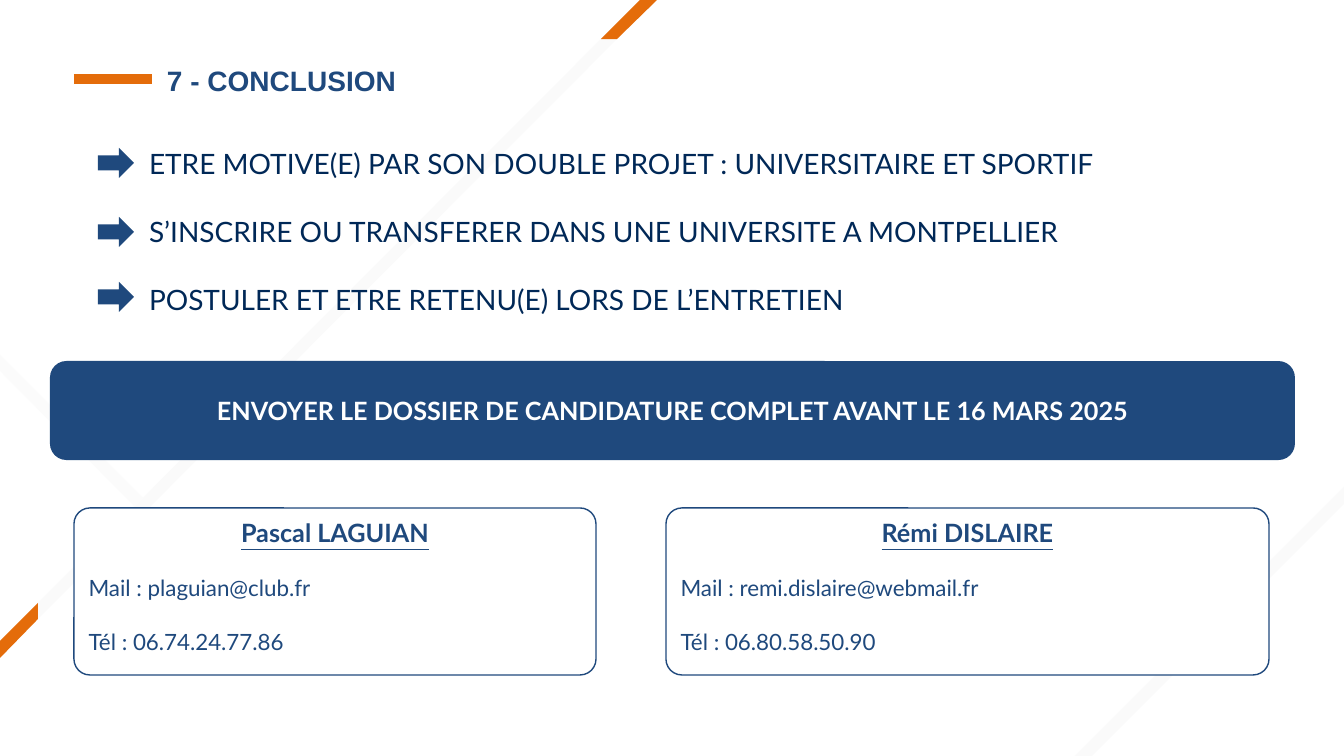
from lxml.etree import SubElement
from pptx import Presentation
from pptx.dml.color import RGBColor
from pptx.enum.shapes import MSO_CONNECTOR as CONN, MSO_SHAPE as SHAPE
from pptx.enum.text import MSO_ANCHOR as ANCHOR, PP_ALIGN as ALIGN
from pptx.oxml.ns import qn
from pptx.util import Pt

PX = 914400 / 100.8
NAVY, INK, ORANGE, PALE, WHITE = "1F497D", "002857", "E46C0A", "F2F2F2", "FFFFFF"


def px(*lengths):
    return [round(n * PX) for n in lengths]


def color(value):
    return RGBColor.from_string(value)


def paint(shape, fill, line=None):
    shape.shadow.inherit = False
    shape.fill.solid()
    shape.fill.fore_color.rgb = color(fill)
    if line:
        shape.line.color.rgb = color(line)
        shape.line.width = Pt(1)
    else:
        shape.line.fill.background()


def style(p, size, ink, font="Lato", bold=False, underline=False, align=ALIGN.LEFT):
    p.alignment = align
    f = p.font
    f.name, f.size, f.bold, f.underline = font, Pt(size), bold, underline
    f.color.rgb = color(ink)


def add_box(s, kind, box, fill, line=None):
    sp = s.shapes.add_shape(kind, *px(*box))
    paint(sp, fill, line)
    return sp


def add_label(s, box, text, anchor=ANCHOR.TOP):
    tf = s.shapes.add_textbox(*px(*box)).text_frame
    tf.word_wrap = True
    tf.vertical_anchor = anchor
    tf.margin_left = tf.margin_right = tf.margin_top = tf.margin_bottom = 0
    p = tf.paragraphs[0]
    p.text = text
    return p


def add_stripe(s, points, fill, alpha=None):
    outline = s.shapes.build_freeform(*points[0], scale=PX)
    outline.add_line_segments(points[1:], close=True)
    sp = outline.convert_to_shape()
    paint(sp, fill)
    if alpha:
        tint = sp.element.spPr.find(qn("a:solidFill"))[0]
        SubElement(tint, qn("a:alpha"), val=str(alpha * 1000))


def add_backdrop(s, box):
    x, y, w, h = box
    right, bottom = x + w, y + h
    add_stripe(s, [(x + 601, y + 39), (x + 617, y + 39), (x + 38, y + 619), (x + 38, y + 603)], PALE, 34)
    add_stripe(s, [(x + 640, y), (x + 657, y), (x + 617, y + 39), (x + 601, y + 39)], ORANGE)
    add_stripe(s, [(x + 38, y + 603), (x + 38, y + 619), (x, y + 658), (x, y + 641)], ORANGE)
    add_stripe(s, [(x, y + 355), (x + 143, y + 498), (x + 134, y + 506), (x, y + 371)], "FBFBFB")
    add_stripe(s, [(right, bottom - 269), (right, bottom - 252), (right - 252, bottom), (right - 269, bottom)], PALE, 34)


def add_heading(s, box, text):
    x, y, w, h = box
    rule = s.shapes.add_connector(CONN.STRAIGHT, *px(x, y + 22, x + 78, y + 22))
    rule.line.color.rgb = color(ORANGE)
    rule.line.width = Pt(7)
    SubElement(rule.element.spPr, qn("a:effectLst"))
    p = add_label(s, (x + 93, y, w - 93, h), text)
    p.line_spacing = 1.2
    style(p, 20, NAVY, "Arial", bold=True)


def add_steps(s, box, steps):
    x, y, w, h = box
    row_h = h / len(steps)
    for i, (text, arrow_top) in enumerate(steps):
        top = y + i * row_h
        add_box(s, SHAPE.RIGHT_ARROW, (x, top + arrow_top, 36, 30), NAVY)
        p = add_label(s, (x + 51, top, w - 51, row_h), text, ANCHOR.MIDDLE)
        style(p, 20, INK)


def add_banner(s, box, text):
    tf = add_box(s, SHAPE.ROUNDED_RECTANGLE, box, NAVY).text_frame
    tf.word_wrap = True
    tf.vertical_anchor = ANCHOR.MIDDLE
    p = tf.paragraphs[0]
    p.text = text
    style(p, 18, WHITE, bold=True, align=ALIGN.CENTER)


def add_contact(s, box, name, mail, phone):
    card = add_box(s, SHAPE.ROUNDED_RECTANGLE, box, WHITE, NAVY)
    card.adjustments[0] = 0.095
    tf = card.text_frame
    tf.word_wrap = True
    tf.vertical_anchor = ANCHOR.TOP
    p = tf.paragraphs[0]
    p.text = name
    style(p, 18, NAVY, bold=True, underline=True, align=ALIGN.CENTER)
    for text in (f"Mail : {mail}", f"Tél : {phone}"):
        p = tf.add_paragraph()
        p.text = text
        p.space_before = Pt(19)
        style(p, 16, NAVY)


def main():
    prs = Presentation()
    prs.slide_width, prs.slide_height = px(1344, 756)
    s = prs.slides.add_slide(prs.slide_layouts[6])
    add_backdrop(s, (0, 0, 1344, 756))
    add_heading(s, (74, 57, 710, 37), "7 - CONCLUSION")
    add_steps(s, (98, 129, 1230, 204), [
        ("ETRE MOTIVE(E) PAR SON DOUBLE PROJET : UNIVERSITAIRE ET SPORTIF", 19),
        ("S’INSCRIRE OU TRANSFERER DANS UNE UNIVERSITE A MONTPELLIER", 20),
        ("POSTULER ET ETRE RETENU(E) LORS DE L’ENTRETIEN", 17),
    ])
    add_banner(s, (50, 361, 1245, 99), "ENVOYER LE DOSSIER DE CANDIDATURE COMPLET AVANT LE 16 MARS 2025")
    add_contact(s, (74, 508, 522, 167), "Pascal LAGUIAN", "plaguian@club.fr", "06.74.24.77.86")
    add_contact(s, (666, 508, 603, 167), "Rémi DISLAIRE", "remi.dislaire@webmail.fr", "06.80.58.50.90")
    prs.save("out.pptx")


if __name__ == "__main__":
    main()
